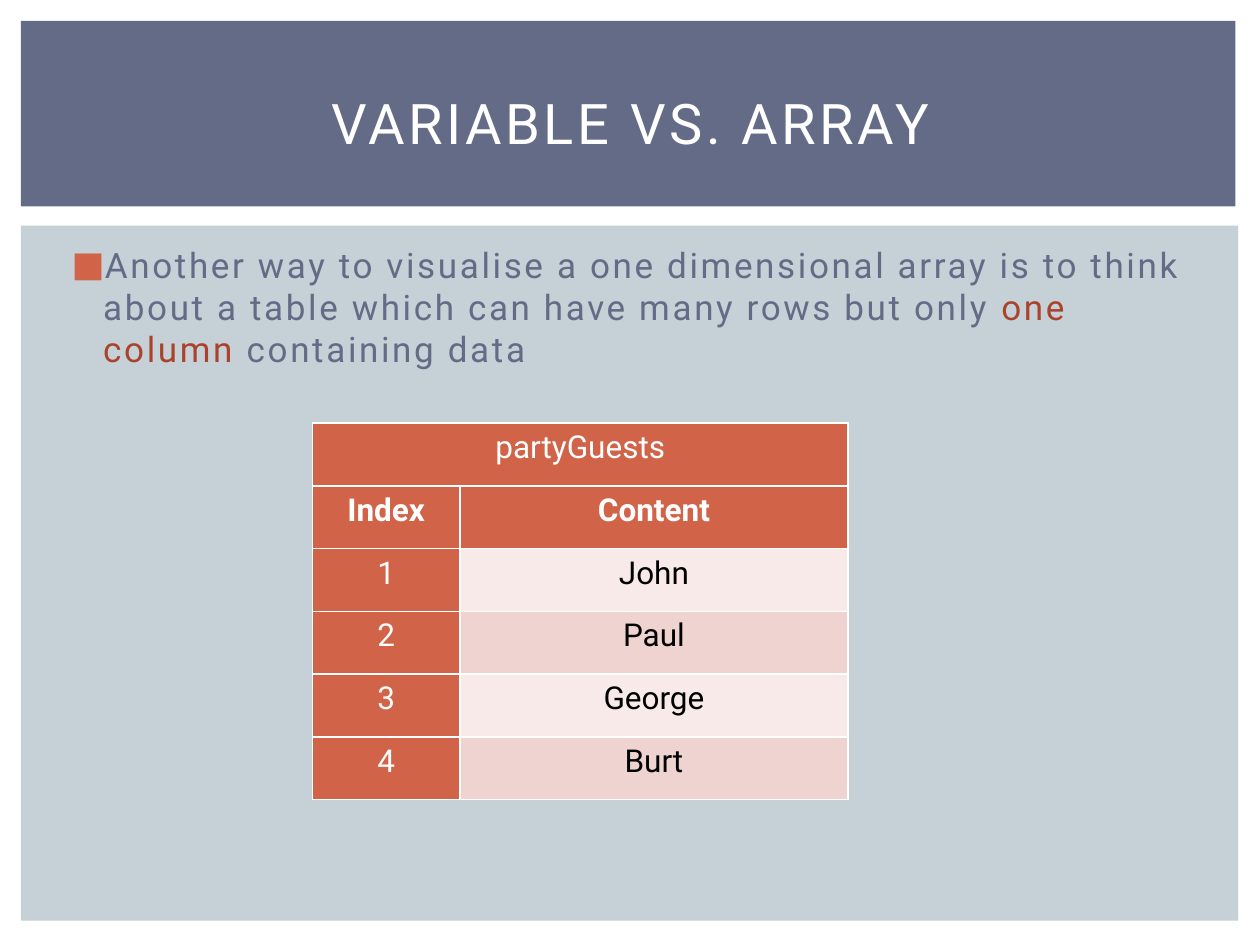
from dataclasses import dataclass

from lxml import etree
from pptx import Presentation
from pptx.dml.color import RGBColor
from pptx.enum import shapes, text
from pptx.oxml.ns import qn
from pptx.util import Pt


@dataclass(frozen=True)
class Theme:
    font: str = "Roboto"
    title_size: int = 32
    body_size: int = 20
    table_size: int = 18
    slate: str = "646B86"
    panel: str = "C5D1D7"
    accent: str = "D16349"
    emphasis: str = "A9432B"
    light_band: str = "F7EAE9"
    dark_band: str = "EED3D0"
    white: str = "FFFFFF"
    black: str = "000000"


THEME = Theme()


def rgb(value):
    return RGBColor.from_string(value)


def add_xml(parent, tag, **attributes):
    return etree.SubElement(parent, qn(tag), attributes)


def place(shape, box):
    shape.left, shape.top, shape.width, shape.height = (Pt(length) for length in box)


def style(font, size, color, bold=False):
    font.name, font.size, font.bold = THEME.font, Pt(size), bold
    font.color.rgb = rgb(color)


def space_letters(paragraph, points):
    for run in paragraph.runs:
        run.font._element.set("spc", str(round(points * 100)))


def add_panel(slide, box, color):
    panel = slide.shapes.add_shape(
        shapes.MSO_SHAPE.RECTANGLE, *(Pt(length) for length in box))
    panel.shadow.inherit = False
    panel.fill.solid()
    panel.fill.fore_color.rgb = rgb(color)
    panel.line.fill.background()


def bring_to_front(slide, shape):
    slide.shapes.element.append(shape.element)


def fill_title(slide, box, wording):
    title = slide.shapes.title
    place(title, box)
    bring_to_front(slide, title)
    frame = title.text_frame
    frame.text = wording
    frame.auto_size = text.MSO_AUTO_SIZE.NONE
    frame.vertical_anchor = text.MSO_ANCHOR.MIDDLE
    paragraph = frame.paragraphs[0]
    paragraph.alignment = text.PP_ALIGN.CENTER
    style(paragraph.font, THEME.title_size, THEME.white)
    space_letters(paragraph, 2)


def fill_body(slide, box, parts):
    body = slide.placeholders[1]
    place(body, box)
    bring_to_front(slide, body)
    frame = body.text_frame
    frame.auto_size = text.MSO_AUTO_SIZE.NONE
    paragraph = frame.paragraphs[0]
    paragraph.space_before = Pt(4)
    style(paragraph.font, THEME.body_size, THEME.slate)
    for wording, color in parts:
        run = paragraph.add_run()
        run.text = wording
        run.font.color.rgb = rgb(color)
    space_letters(paragraph, 1.5)

    # Square bullet with a hanging indent
    properties = paragraph._p.get_or_add_pPr()
    properties.set("marL", str(Pt(21.6)))
    properties.set("indent", str(-Pt(18)))
    bullet_color = add_xml(properties, "a:buClr")
    add_xml(bullet_color, "a:srgbClr", val=THEME.accent)
    add_xml(properties, "a:buFont", typeface=THEME.font)
    add_xml(properties, "a:buChar", char="■")


def format_cell(cell, fill, color, bold):
    properties = cell._tc.get_or_add_tcPr()
    for side in "LRTB":
        border = add_xml(properties, f"a:ln{side}", w=str(Pt(1)))
        add_xml(add_xml(border, "a:solidFill"), "a:srgbClr", val=THEME.white)
    cell.fill.solid()
    cell.fill.fore_color.rgb = rgb(fill)
    paragraph = cell.text_frame.paragraphs[0]
    paragraph.alignment = text.PP_ALIGN.CENTER
    style(paragraph.font, THEME.table_size, color, bold)


def add_array_table(slide, box, name, headings, values, index_width):
    rows = [(name, ""), headings]
    rows += [(str(index), value) for index, value in enumerate(values, 1)]
    table = slide.shapes.add_table(
        len(rows), 2, *(Pt(length) for length in box)).table
    table.first_row = table.horz_banding = False
    table.columns[0].width = Pt(index_width)
    table.columns[1].width = Pt(box[2] - index_width)
    table.cell(0, 0).merge(table.cell(0, 1))
    for row_number, row in enumerate(rows):
        for column_number, wording in enumerate(row):
            cell = table.cell(row_number, column_number)
            cell.text = wording
            fill, color = THEME.accent, THEME.white
            if row_number > 1 and column_number == 1:
                fill = THEME.dark_band if row_number % 2 else THEME.light_band
                color = THEME.black
            format_cell(cell, fill, color, bold=row_number == 1)


def main():
    presentation = Presentation()
    presentation.slide_width, presentation.slide_height = Pt(720), Pt(540)
    slide = presentation.slides.add_slide(presentation.slide_layouts[1])

    # Background panels
    add_panel(slide, (12, 129, 695.5, 397.2), THEME.panel)
    add_panel(slide, (12, 12, 694, 106), THEME.slate)

    # Explanation
    fill_body(slide, (30.2, 135.4, 662, 347), [
        ("Another way to visualise a one dimensional array is to think about "
         "a table which can have many rows but only ", THEME.slate),
        ("one column ", THEME.emphasis),
        ("containing data", THEME.slate),
    ])

    # Array shown as a table
    add_array_table(slide, (178.6, 241.8, 306, 215.2), "partyGuests",
                    ("Index", "Content"), ("John", "Paul", "George", "Burt"), 84.2)

    # Title
    fill_title(slide, (30.2, 28.1, 660.2, 82.8), "VARIABLE VS. ARRAY")

    presentation.save("out.pptx")


if __name__ == "__main__":
    main()
